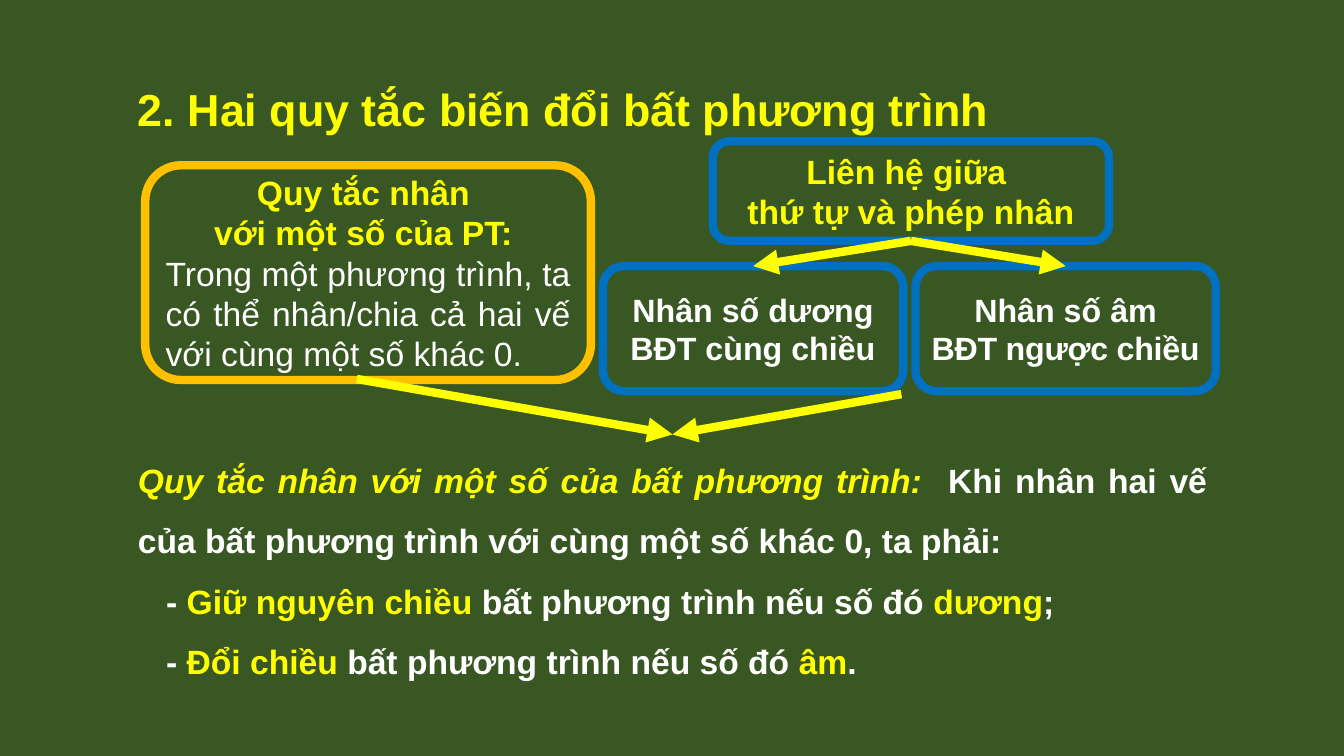
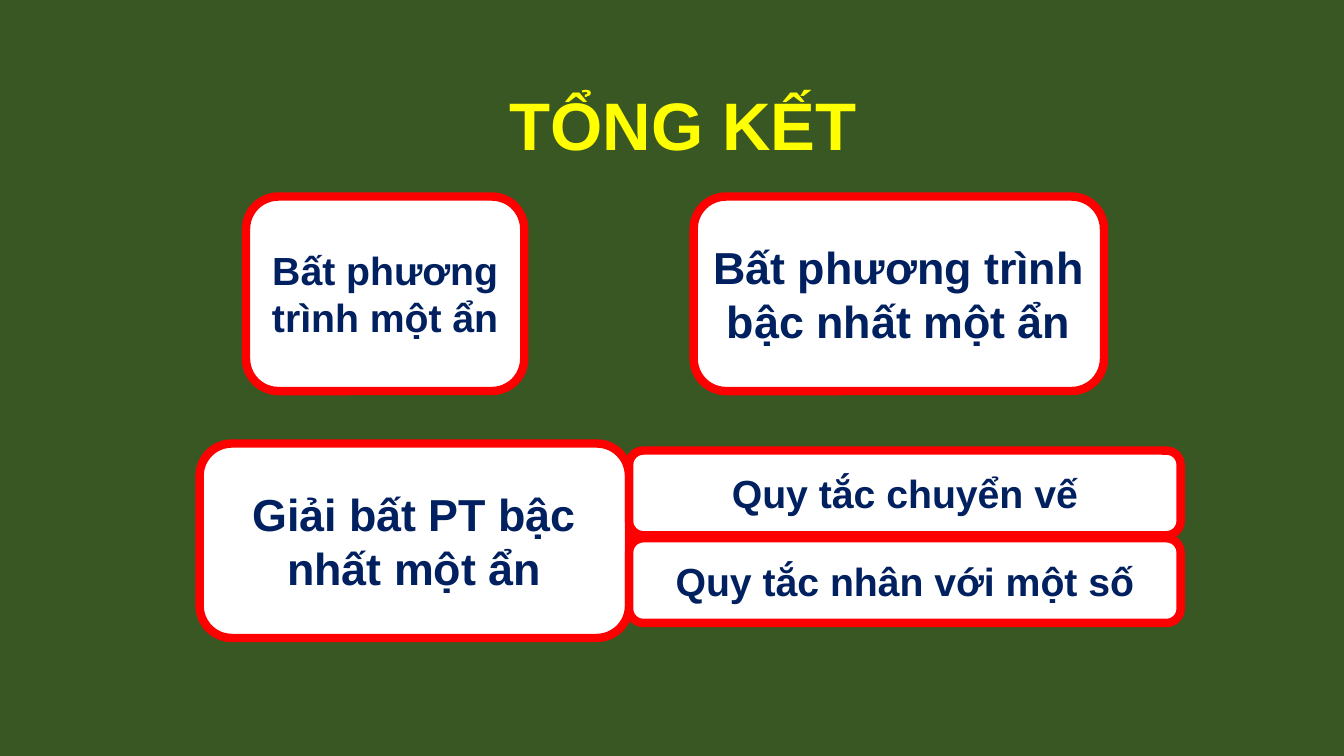
from lxml import etree
from pptx import Presentation
from pptx.dml.color import RGBColor
from pptx.enum import shapes, text
from pptx.oxml import ns
from pptx.util import Pt

PX = 9144  # EMU in one px, 100 px to the inch
FONT = "Arial"
LINE_WIDTH = 6

GREEN = RGBColor(0x38, 0x57, 0x23)
YELLOW = RGBColor(0xFF, 0xFF, 0x00)
WHITE = RGBColor(0xFF, 0xFF, 0xFF)
AMBER = RGBColor(0xFF, 0xC0, 0x00)
BLUE = RGBColor(0x00, 0x70, 0xC0)
RED = RGBColor(0xFF, 0x00, 0x00)
NAVY = RGBColor(0x00, 0x20, 0x60)

LEFT, CENTER, JUSTIFY = (
    text.PP_ALIGN.LEFT, text.PP_ALIGN.CENTER, text.PP_ALIGN.JUSTIFY)


def emu(*lengths):
    return [length * PX for length in lengths]


def write(shape, *runs, size=24, color=WHITE, bold=True, align=CENTER,
          line_spacing=None, indent=0, tracking=0):
    """Add one paragraph; a run is a string or (string, color, italic)."""
    frame = shape.text_frame
    paragraph = frame.add_paragraph() if frame.text else frame.paragraphs[0]
    paragraph.alignment = align
    if line_spacing:
        paragraph.line_spacing = line_spacing
    if indent:
        paragraph._p.get_or_add_pPr().set("marL", str(indent * PX))
    for item in runs:
        words, run_color, italic = (
            (item, color, False) if isinstance(item, str) else item)
        run = paragraph.add_run()
        run.text = words
        run.font.name = FONT
        run.font.size = Pt(size)
        run.font.bold = bold
        run.font.italic = italic
        run.font.color.rgb = run_color
        if tracking:
            run._r.get_or_add_rPr().set("spc", str(tracking))


def add_text_box(slide, box, wrap=True):
    shape = slide.shapes.add_textbox(*emu(*box))
    shape.text_frame.word_wrap = wrap
    return shape


def add_card(slide, box, outline, fill=None):
    shape = slide.shapes.add_shape(
        shapes.MSO_SHAPE.ROUNDED_RECTANGLE, *emu(*box))
    shape.shadow.inherit = False
    if fill is None:
        shape.fill.background()
    else:
        shape.fill.solid()
        shape.fill.fore_color.rgb = fill
    shape.line.color.rgb = outline
    shape.line.width = Pt(LINE_WIDTH)
    shape.text_frame.word_wrap = True
    shape.text_frame.vertical_anchor = text.MSO_ANCHOR.MIDDLE
    return shape


def add_arrow(slide, start=(0, 0), end=(0, 0)):
    arrow = slide.shapes.add_connector(
        shapes.MSO_CONNECTOR.STRAIGHT, *emu(*start, *end))
    arrow.line.color.rgb = YELLOW
    arrow.line.width = Pt(LINE_WIDTH)
    etree.SubElement(arrow.line._get_or_add_ln(), ns.qn("a:tailEnd"),
                     type="triangle")
    etree.SubElement(arrow._element.spPr, ns.qn("a:effectLst"))
    return arrow


def add_title(slide, box, words, wrap=True, **style):
    write(add_text_box(slide, box, wrap), words, color=YELLOW, **style)


# Rule for equations
def add_equation_rule(slide, box):
    card = add_card(slide, box, AMBER)
    for line in ("Quy tắc nhân ", "với một số của PT: "):
        write(card, line, color=YELLOW)
    write(card, "Trong một phương trình, ta có thể nhân/chia cả hai vế "
                "với cùng một số khác 0.", bold=False, align=JUSTIFY)


# Link between order and multiplication, with its two cases
def add_order_diagram(slide, box):
    left, top, width, height = box
    gap = 12
    case_width = (width - gap) // 2
    case_height = 124
    case_top = top + height - case_height

    root = add_card(slide, (left + 109, top, 393, 99), BLUE)
    for line in ("Liên hệ giữa ", "thứ tự và phép nhân"):
        write(root, line, color=YELLOW)

    cases = (("Nhân số dương", "BĐT cùng chiều", 0),
             ("Nhân số âm", "BĐT ngược chiều", -20))
    for column, (number, result, tracking) in enumerate(cases):
        case_left = left + column * (case_width + gap)
        case = add_card(
            slide, (case_left, case_top, case_width, case_height), BLUE)
        write(case, number, size=23)
        write(case, result, size=23, tracking=tracking)
        arrow = add_arrow(slide)
        arrow.begin_connect(root, 2)
        arrow.end_connect(case, 0)


# Rule for inequalities
def add_inequality_rule(slide, box):
    shape = add_text_box(slide, box)
    write(shape,
          ("Quy tắc nhân với một số của bất phương trình:  ", YELLOW, True),
          "Khi nhân hai vế của bất phương trình với cùng một số khác 0, "
          "ta phải:", align=JUSTIFY, line_spacing=1.5)
    for action, sign, stop in (("Giữ nguyên chiều ", "dương", ";"),
                               ("Đổi chiều ", "âm", ".")):
        write(shape, "- ", (action, YELLOW, False),
              "bất phương trình nếu số đó ", (sign, YELLOW, False), stop,
              align=LEFT, line_spacing=1.5, indent=28)


def build_rules_slide(slide):
    add_title(slide, (127, 76, 871, 64),
              "2. Hai quy tắc biến đổi bất phương trình",
              wrap=False, size=32, align=LEFT)
    add_equation_rule(slide, (144, 164, 442, 213))
    add_order_diagram(slide, (598, 140, 608, 248))
    add_inequality_rule(slide, (127, 431, 1080, 252))
    # Both sources lead to the new rule
    for start in ((354, 376), (894, 391)):
        add_arrow(slide, start, (667, 431))


# Topic cards, placed from the corner of the box
def add_topics(slide, box):
    left, top = box[:2]
    tall, short = 193, 84
    lower_top, rule_left, rule_width, rule_step = 245, 426, 547, 87
    topics = [
        (46, 0, 276, tall, "Bất phương trình một ẩn", 28),
        (490, 0, 407, tall, "Bất phương trình bậc nhất một ẩn", 32),
        (0, lower_top, rule_left, tall, "Giải bất PT bậc nhất một ẩn", 32),
    ]
    for row, rule in enumerate(("Quy tắc chuyển vế",
                                "Quy tắc nhân với một số")):
        topics.append((rule_left, lower_top + 7 + row * rule_step,
                       rule_width, short, rule, 28))
    for x, y, width, height, words, size in topics:
        card = add_card(slide, (left + x, top + y, width, height), RED, WHITE)
        write(card, words, size=size, color=NAVY)


def build_summary_slide(slide):
    add_title(slide, (60, 78, 1235, 91), "TỔNG KẾT", size=48)
    add_topics(slide, (198, 195, 973, 438))


def main():
    presentation = Presentation()
    presentation.slide_width, presentation.slide_height = emu(1333, 750)
    background = presentation.slide_master.background.fill
    background.solid()
    background.fore_color.rgb = GREEN
    blank = presentation.slide_layouts[6]
    for build in (build_rules_slide, build_summary_slide):
        build(presentation.slides.add_slide(blank))
    presentation.save("out.pptx")


if __name__ == "__main__":
    main()
